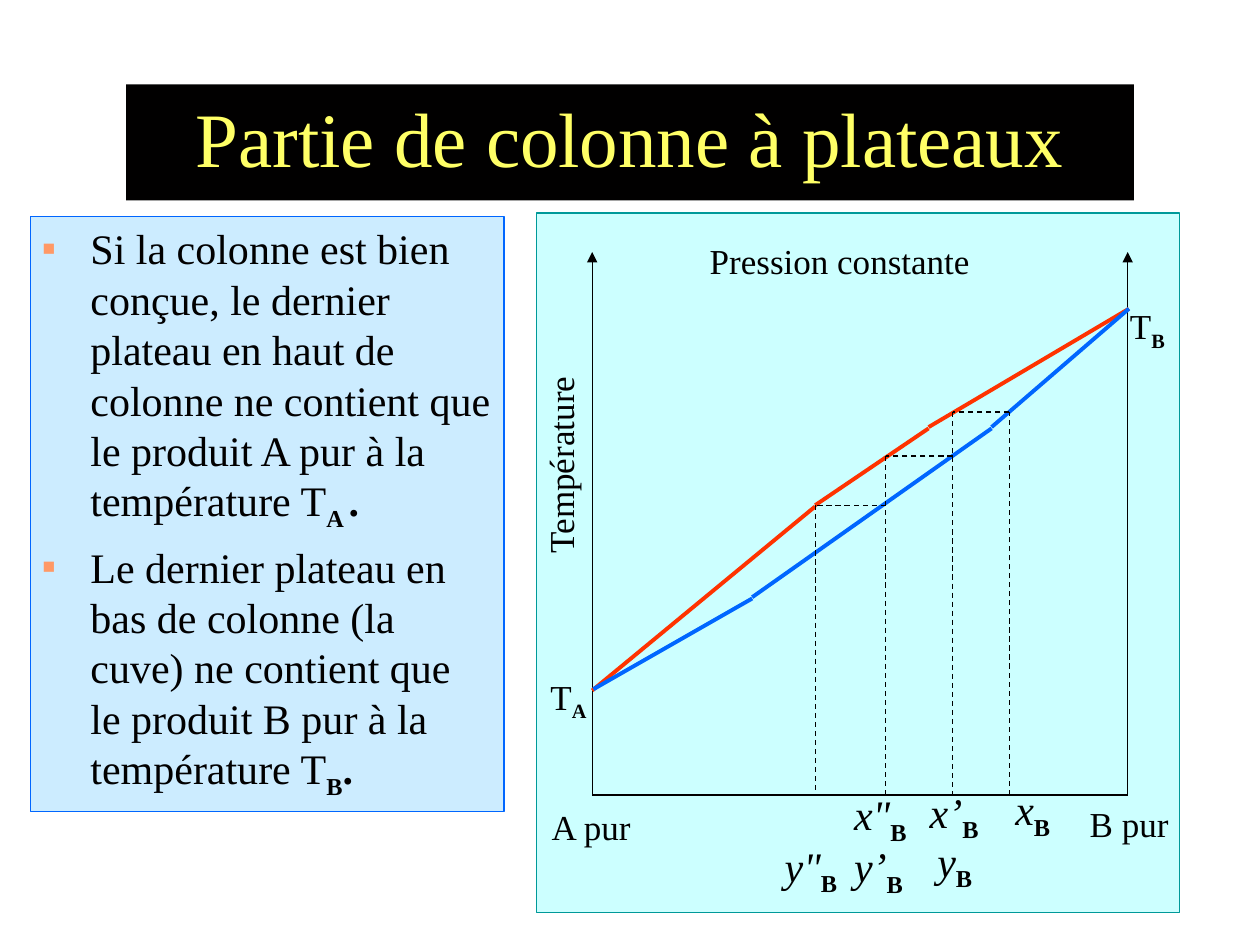
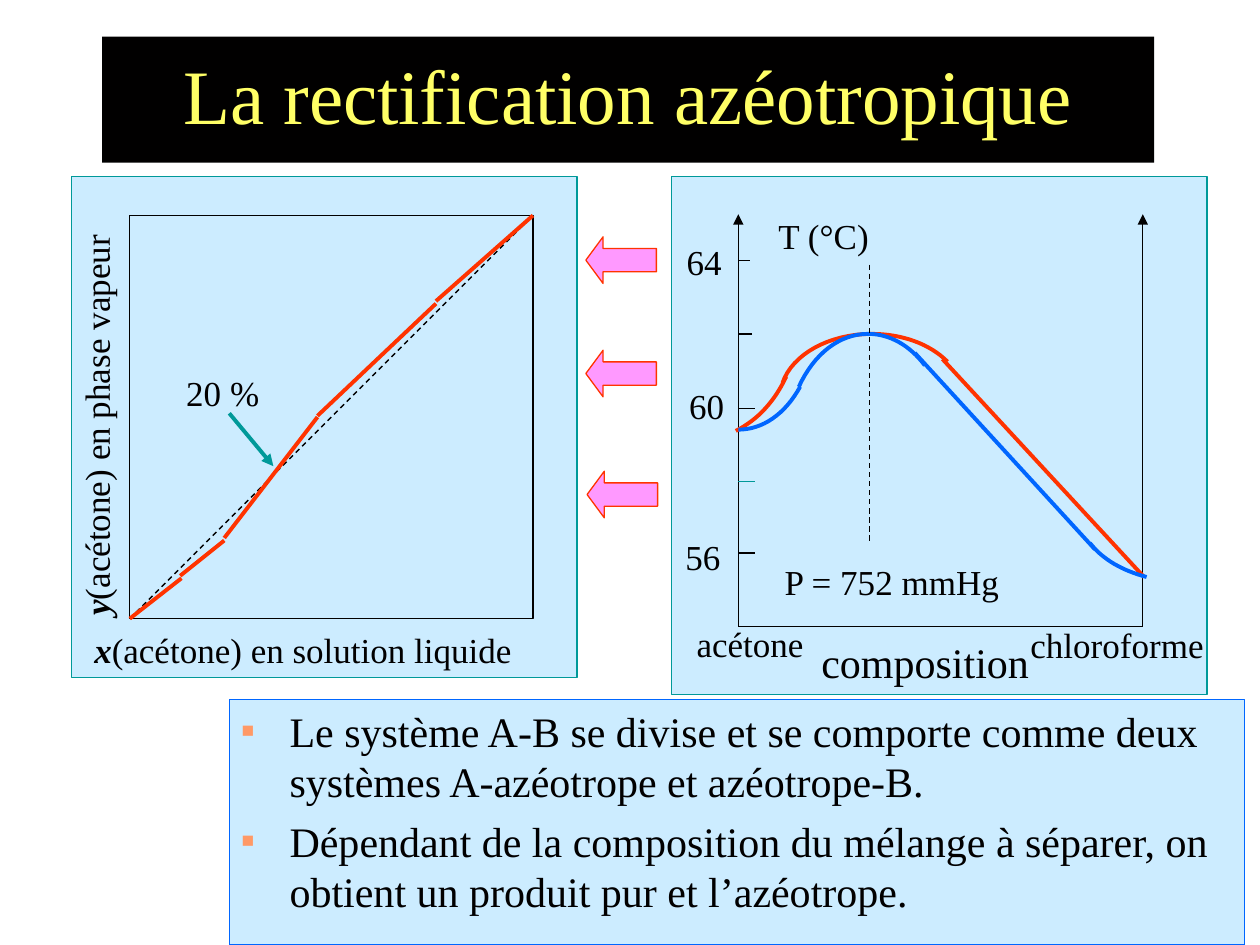
from lxml import etree
from pptx import Presentation
from pptx.dml.color import RGBColor
from pptx.enum import dml, shapes, text
from pptx.oxml import ns
from pptx.util import Inches, Pt

FONT = "Times New Roman"
BLACK, YELLOW, TEAL = "010000", "FFFF66", "009999"
RED, BLUE, ORANGE, PINK = "FF3300", "0066FF", "FF9966", "FF99FF"
PALE_BLUE, PALE_CYAN = "CCECFF", "CCFFFF"
THIN, THICK = 0.75, 2.25
TITLE_ONLY = 5


def color(value):
    return RGBColor.from_string(value)


def add_xml(parent, tag, **attributes):
    return etree.SubElement(parent, ns.qn(tag), attributes)


def bezier(start, control1, control2, end, steps=16):
    """Points of a cubic curve, without its start."""
    points = []
    for step in range(1, steps + 1):
        t = step / steps
        weights = ((1 - t) ** 3, 3 * t * (1 - t) ** 2, 3 * t * t * (1 - t), t ** 3)
        points.append(tuple(
            sum(weight * point[axis] for weight, point
                in zip(weights, (start, control1, control2, end)))
            for axis in (0, 1)))
    return points


class Deck:
    """Shared style and the slide being drawn."""

    def __init__(self):
        self.presentation = Presentation()
        self.presentation.slide_width = Inches(10)
        self.presentation.slide_height = Inches(7.5)
        self.slide = None

    def new_slide(self, title, at):
        layout = self.presentation.slide_layouts[TITLE_ONLY]
        self.slide = self.presentation.slides.add_slide(layout)
        shape = self.slide.shapes.title
        shape.left, shape.top, shape.width, shape.height = map(Inches, at)
        shape.fill.solid()
        shape.fill.fore_color.rgb = color(BLACK)
        frame = shape.text_frame
        frame.word_wrap = True
        frame.auto_size = text.MSO_AUTO_SIZE.NONE
        frame.vertical_anchor = text.MSO_ANCHOR.MIDDLE
        paragraph = frame.paragraphs[0]
        paragraph.alignment = text.PP_ALIGN.CENTER
        paragraph.line_spacing = 0.9
        self.runs(paragraph, [(title, "")], 44, YELLOW)

    def runs(self, paragraph, parts, size, ink=BLACK):
        """Parts are (text, style): b bold, i italic, s subscript."""
        for content, style in parts:
            run = paragraph.add_run()
            run.text = content
            run.font.name = FONT
            run.font.size = Pt(size)
            run.font.bold = "b" in style
            run.font.italic = "i" in style
            run.font.color.rgb = color(ink)
            if "s" in style:
                run._r.get_or_add_rPr().set("baseline", "-25000")

    def label(self, at, *lines, size=20, rotation=0, centered=False,
              wrap=True, spacings=()):
        shape = self.slide.shapes.add_textbox(*map(Inches, at))
        shape.rotation = rotation
        frame = shape.text_frame
        frame.word_wrap = wrap
        for index, parts in enumerate(lines):
            paragraph = frame.add_paragraph() if index else frame.paragraphs[0]
            if index:
                paragraph.space_before = Pt(14)
            if spacings:
                paragraph.line_spacing = spacings[index]
            if centered:
                paragraph.alignment = text.PP_ALIGN.CENTER
            self.runs(paragraph, [(parts, "")] if isinstance(parts, str) else parts, size)

    def box(self, at, fill, outline, kind=shapes.MSO_SHAPE.RECTANGLE):
        shape = self.slide.shapes.add_shape(kind, *map(Inches, at))
        shape.shadow.inherit = False
        shape.fill.solid()
        shape.fill.fore_color.rgb = color(fill)
        shape.line.color.rgb = color(outline)
        shape.line.width = Pt(THIN)
        return shape

    def bullets(self, at, items):
        frame = self.box(at, PALE_BLUE, BLUE).text_frame
        frame.word_wrap = True
        frame.vertical_anchor = text.MSO_ANCHOR.TOP
        for index, parts in enumerate(items):
            paragraph = frame.add_paragraph() if index else frame.paragraphs[0]
            properties = paragraph._p.get_or_add_pPr()
            properties.set("marL", str(Inches(0.38)))
            properties.set("indent", str(-Inches(0.38)))
            add_xml(add_xml(properties, "a:buClr"), "a:srgbClr", val=ORANGE)
            add_xml(properties, "a:buSzPct", val="50000")
            add_xml(properties, "a:buFont", typeface=FONT)
            add_xml(properties, "a:buChar", char="■")
            paragraph.alignment = text.PP_ALIGN.LEFT
            if index:
                paragraph.space_before = Pt(5)
            self.runs(paragraph, parts, 24)

    def line(self, start, end, ink=BLACK, width=THIN, dashed=False, arrow=False):
        connector = self.slide.shapes.add_connector(
            shapes.MSO_CONNECTOR.STRAIGHT, *map(Inches, (*start, *end)))
        connector.line.color.rgb = color(ink)
        connector.line.width = Pt(width)
        if dashed:
            connector.line.dash_style = dml.MSO_LINE.DASH
        if arrow:
            add_xml(connector.line._get_or_add_ln(), "a:tailEnd", type="triangle")
        add_xml(connector._element.spPr, "a:effectLst")

    def curve(self, ink, start, *segments):
        """Each segment is two control points and an end point."""
        points = [start]
        for segment in segments:
            points += bezier(points[-1], *segment)
        points = [(Inches(x), Inches(y)) for x, y in points]
        builder = self.slide.shapes.build_freeform(*points[0])
        builder.add_line_segments(points[1:], close=False)
        shape = builder.convert_to_shape()
        shape.shadow.inherit = False
        shape.fill.background()
        shape.line.color.rgb = color(ink)
        shape.line.width = Pt(THICK)

    def axes(self, left, right, base, top):
        self.line((left, base), (right, base))
        for x in (left, right):
            self.line((x, base), (x, top), arrow=True)


def subscripted(symbol, index, style=""):
    return [(symbol, style), (index, "bs")]


def column_slide(deck):
    deck.new_slide("Partie de colonne à plateaux", (1, 0.67, 8, 0.92))

    # Diagram frame and axes
    base = 6.31
    deck.box((4.26, 1.69, 5.1, 5.55), PALE_CYAN, TEAL)
    deck.axes(4.7, 8.95, base, 2)
    deck.label((3.57, 3.4, 1.75, 0.43), "Température", rotation=270)
    deck.label((5.08, 1.85, 3.17, 0.43), "Pression constante", centered=True)
    deck.label((4.27, 5.31, 0.53, 0.43), subscripted("T", "A"))
    deck.label((8.87, 2.37, 0.53, 0.43), subscripted("T", "B"))
    deck.label((4.28, 6.34, 0.89, 0.43), "A pur")
    deck.label((8.55, 6.32, 0.89, 0.43), "B pur")

    # Vapour and liquid curves
    for ink, segments in (
            (RED, [((4.7, 5.48), (6.47, 4.02)), ((8.96, 2.45), (7.37, 3.39)),
                   ((6.47, 4.01), (7.37, 3.4))]),
            (BLUE, [((4.71, 5.47), (5.97, 4.75)), ((8.96, 2.45), (7.87, 3.39)),
                    ((7.87, 3.4), (5.97, 4.74))])):
        for start, end in segments:
            deck.line(start, end, ink, THICK)

    # Plate steps
    step_x = (6.47, 7.03, 7.56, 8.01)
    step_y = (4.01, 3.62, 3.27)
    for left, right, level in zip(step_x, step_x[1:], step_y):
        deck.line((right, level), (left, level), dashed=True)
        deck.line((left, level), (left, base), dashed=True)
    deck.line((step_x[-1], base), (step_x[-1], step_y[-1]), dashed=True)

    # Compositions on each plate
    for at, symbol in (((7.96, 6.17, 0.55, 0.5), "x"),
                       ((7.34, 6.58, 0.55, 0.5), "y"),
                       ((7.28, 6.19, 0.68, 0.5), "x’")):
        deck.label(at, subscripted(symbol, "B", "i"), size=24)
    deck.label((6.68, 6.4, 0.7, 0.66), subscripted('x"', "B", "i"),
               subscripted("y’", "B", "i"), size=24, spacings=(0.4, 0.5))
    deck.label((6.13, 6.62, 0.64, 0.5), subscripted('y"', "B", "i"),
               size=24, wrap=False)

    # Explanation
    deck.bullets((0.24, 1.72, 3.76, 4.72), [
        [("Si la colonne est bien conçue, le dernier plateau en haut de colonne "
          "ne contient que le produit A pur à la température T", ""),
         ("A ", "bs"), (".", "b")],
        [("Le dernier plateau en bas de colonne (la cuve) ne contient que "
          "le produit B pur à la température T", ""),
         ("B", "bs"), (".", "b")]])


def azeotrope_slide(deck):
    deck.new_slide("La rectification azéotropique", (0.81, 0.29, 8.35, 1))

    # Vapour against liquid composition
    deck.box((0.57, 1.4, 4.01, 3.98), PALE_BLUE, TEAL)
    deck.box((1.03, 1.71, 3.2, 3.2), PALE_BLUE, BLACK)
    deck.line((1.03, 4.91), (4.23, 1.71), dashed=True)
    for start, end in (((1.78, 4.27), (2.52, 3.31)), ((1.03, 4.91), (1.44, 4.59)),
                       ((1.43, 4.57), (1.78, 4.29)), ((4.23, 1.71), (3.46, 2.39)),
                       ((3.46, 2.41), (2.52, 3.3))):
        deck.line(start, end, RED, THICK)
    deck.label((0.65, 4.94, 3.77, 0.43),
               [("x", "bi"), ("(acétone) en solution liquide", "")])
    deck.label((-1.05, 2.96, 3.62, 0.43),
               [("y", "bi"), ("(acétone) en phase vapeur", "")], rotation=270)
    deck.label((1.38, 2.9, 0.8, 0.43), "20 %")
    deck.line((1.82, 3.28), (2.17, 3.7), TEAL, THICK, arrow=True)

    # Arrows between the diagrams
    for left, top in ((4.65, 1.88), (4.65, 2.78), (4.66, 3.74)):
        arrow = deck.box((left, top, 0.56, 0.37), PINK, RED,
                         shapes.MSO_SHAPE.LEFT_ARROW)
        arrow.adjustments[0] = 0.5
        arrow.adjustments[1] = 0.37

    # Conclusions
    deck.bullets((1.82, 5.55, 8.06, 1.95), [
        [("Le système A-B se divise et se comporte comme deux systèmes "
          "A-azéotrope et azéotrope-B.", "")],
        [("Dépendant de la composition du mélange à séparer, on obtient "
          "un produit pur et l’azéotrope.", "")]])

    # Boiling diagram: frame, axes and ticks
    deck.box((5.33, 1.4, 4.25, 4.11), PALE_BLUE, TEAL)
    deck.axes(5.86, 9.07, 4.97, 1.7)
    for end, y, ink in ((5.99, 4.39, BLACK), (5.99, 3.82, TEAL), (5.99, 3.24, BLACK),
                        (5.97, 2.65, BLACK), (5.95, 2.07, BLACK)):
        deck.line((end, y), (5.86, y), ink)
    for at, content in (((6.08, 1.65, 0.99, 0.43), "T (°C)"),
                        ((5.43, 4.89, 1.13, 0.43), "acétone"),
                        ((8.08, 4.9, 1.66, 0.43), "chloroforme"),
                        ((5.34, 4.2, 0.62, 0.43), "56"),
                        ((5.37, 3, 0.62, 0.43), "60"),
                        ((5.35, 1.86, 0.62, 0.43), "64"),
                        ((6.13, 4.4, 2.14, 0.43), "P = 752 mmHg")):
        deck.label(at, content)
    deck.label((6.42, 5, 2.25, 0.5), "composition", size=24)

    # Vapour curve
    deck.curve(RED, (5.84, 3.42), ((6.02, 3.33), (6.15, 3.18), (6.24, 2.99)))
    deck.curve(RED, (7.52, 2.87), ((7.38, 2.73), (7.16, 2.65), (6.92, 2.65)),
               ((6.58, 2.65), (6.29, 2.81), (6.21, 3.04)))
    deck.line((9.08, 4.58), (7.48, 2.85), RED, THICK)

    # Liquid curve
    deck.curve(BLUE, (5.86, 3.41), ((6.05, 3.41), (6.23, 3.29), (6.35, 3.07)))
    deck.curve(BLUE, (7.34, 2.9), ((7.22, 2.74), (7.06, 2.65), (6.89, 2.65)),
               ((6.66, 2.65), (6.46, 2.81), (6.34, 3.07)))
    deck.curve(BLUE, (9.1, 4.58), ((8.91, 4.53), (8.75, 4.44), (8.65, 4.31)))
    deck.line((7.26, 2.8), (8.69, 4.36), BLUE, THICK)

    # Azeotrope composition
    deck.line((6.9, 2.1), (6.9, 4.31), dashed=True)


def main():
    deck = Deck()
    column_slide(deck)
    azeotrope_slide(deck)
    deck.presentation.save("out.pptx")


if __name__ == "__main__":
    main()
